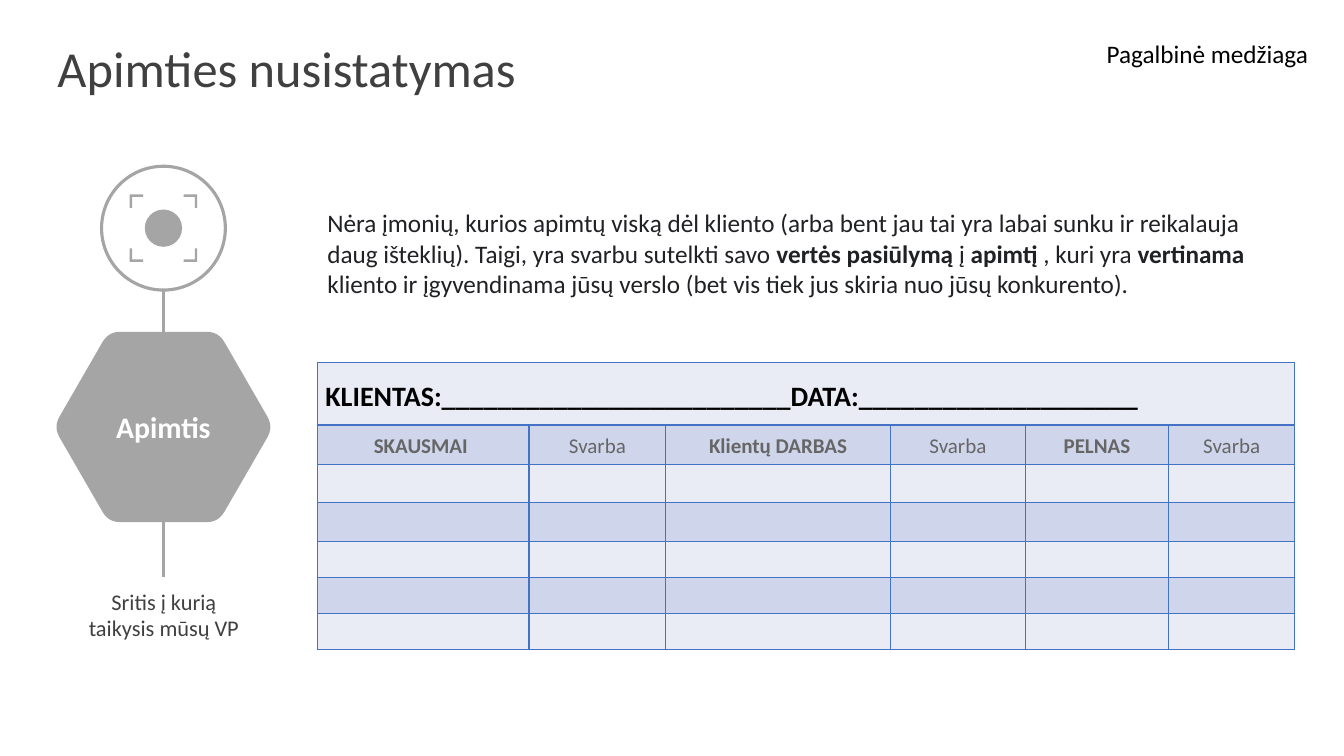
from dataclasses import dataclass
from itertools import product
from math import cos, pi, sin

from lxml import etree
from pptx import Presentation
from pptx.dml.color import RGBColor
from pptx.enum.shapes import MSO_CONNECTOR, MSO_SHAPE
from pptx.enum.text import MSO_ANCHOR, PP_ALIGN
from pptx.oxml.ns import qn
from pptx.util import Cm, Pt

LEFT, CENTER = PP_ALIGN.LEFT, PP_ALIGN.CENTER
TOP, MIDDLE = MSO_ANCHOR.TOP, MSO_ANCHOR.MIDDLE
OVAL, STRAIGHT = MSO_SHAPE.OVAL, MSO_CONNECTOR.STRAIGHT


@dataclass(frozen=True)
class Theme:
    font: str = "Calibri"
    gray: str = "A5A5A5"
    heading: str = "404040"
    body: str = "202124"
    label: str = "666666"
    black: str = "000000"
    white: str = "FFFFFF"
    border: str = "4472C4"
    bands: tuple = ("E9EBF5", "CFD5EA")
    title_size: float = 36
    badge_size: float = 21.3
    client_size: float = 20
    body_size: float = 18
    caption_size: float = 16
    label_size: float = 15
    line_width: float = 2.25
    border_width: float = 1


class SlideBuilder:
    def __init__(self, page, theme):
        self.page = page
        self.theme = theme

    def fill_text(self, frame, spans, size, color, align=LEFT, spacing=None, after=None):
        para = frame.paragraphs[0]
        para.alignment = align
        para.line_spacing = spacing
        para.space_after = after
        para.font.name = self.theme.font
        para.font.size = Pt(size)
        para.font.color.rgb = RGBColor.from_string(color)
        weights = {bold for _, bold in spans}
        if len(weights) == 1:
            para.font.bold = weights.pop()
        for text, bold in spans:
            span = para.add_run()
            span.text = text
            if para.font.bold is None:
                span.font.bold = bold

    def text(self, bounds, spans, size, color, inset=True, wrap=True, anchor=TOP, **layout):
        box = self.page.shapes.add_textbox(*map(Cm, bounds))
        frame = box.text_frame
        frame.word_wrap = wrap
        frame.vertical_anchor = anchor
        if not inset:
            frame.margin_left = frame.margin_right = 0
            frame.margin_top = frame.margin_bottom = 0
        self.fill_text(frame, spans, size, color, **layout)

    def paint(self, shape, filled=True):
        shape.shadow.inherit = False
        gray = RGBColor.from_string(self.theme.gray)
        if filled:
            shape.fill.solid()
            shape.fill.fore_color.rgb = gray
            shape.line.fill.background()
        else:
            shape.fill.background()
            shape.line.color.rgb = gray
            shape.line.width = Pt(self.theme.line_width)

    def circle(self, shapes, x, y, radius, filled):
        side = Cm(2 * radius)
        shape = shapes.add_shape(OVAL, Cm(x - radius), Cm(y - radius), side, side)
        self.paint(shape, filled)

    def polygon(self, shapes, points):
        corners = [(Cm(x), Cm(y)) for x, y in points]
        builder = shapes.build_freeform(*corners[0])
        builder.add_line_segments(corners[1:])
        shape = builder.convert_to_shape()
        self.paint(shape)
        return shape

    def line(self, x, top, bottom):
        line = self.page.shapes.add_connector(STRAIGHT, Cm(x), Cm(top), Cm(x), Cm(bottom))
        line.line.color.rgb = RGBColor.from_string(self.theme.gray)
        line.line.width = Pt(self.theme.line_width)
        etree.SubElement(line._element.spPr, qn("a:effectLst"))

    def focus_icon(self, x, y, reach, arm, thick, dot):
        group = self.page.shapes.add_group_shape()
        bracket = [(reach, reach), (reach - arm, reach), (reach - arm, reach - thick),
                   (reach - thick, reach - thick), (reach - thick, reach - arm),
                   (reach, reach - arm)]
        for across, down in product((-1, 1), repeat=2):
            self.polygon(group.shapes, [(x + across * dx, y + down * dy) for dx, dy in bracket])
        self.circle(group.shapes, x, y, dot, True)

    def hexagon(self, x, y, radius, cut, label):
        inner, steps = cut / radius, 6
        corners = [(x + radius * cos(k * pi / 3), y + radius * sin(k * pi / 3)) for k in range(6)]
        points = []
        for k, corner in enumerate(corners):
            start, end = (
                [c + inner * (n - c) for c, n in zip(corner, neighbour)]
                for neighbour in (corners[k - 1], corners[(k + 1) % 6]))
            for t in (step / steps for step in range(steps + 1)):
                points.append([(1 - t) ** 2 * s + 2 * t * (1 - t) * c + t ** 2 * e
                               for s, c, e in zip(start, corner, end)])
        shape = self.polygon(self.page.shapes, points)
        shape.text_frame.vertical_anchor = MIDDLE
        self.fill_text(shape.text_frame, [(label, True)], self.theme.badge_size,
                       self.theme.white, CENTER)

    def cell_borders(self, cell):
        properties = cell._tc.get_or_add_tcPr()
        for place, side in enumerate(("lnL", "lnR", "lnT", "lnB")):
            edge = etree.Element(qn(f"a:{side}"), w=str(Pt(self.theme.border_width)))
            fill = etree.SubElement(edge, qn("a:solidFill"))
            etree.SubElement(fill, qn("a:srgbClr"), val=self.theme.border)
            properties.insert(place, edge)

    def table(self, left, top, widths, heights, client, headings):
        theme = self.theme
        table = self.page.shapes.add_table(
            len(heights), len(widths), Cm(left), Cm(top),
            Cm(sum(widths)), Cm(sum(heights))).table
        table.first_row = table.horz_banding = False
        for column, width in zip(table.columns, widths):
            column.width = Cm(width)
        for row, height in zip(table.rows, heights):
            row.height = Cm(height)
        table.cell(0, 0).merge(table.cell(0, len(widths) - 1))
        for row, column in product(range(len(heights)), range(len(widths))):
            cell = table.cell(row, column)
            cell.fill.solid()
            cell.fill.fore_color.rgb = RGBColor.from_string(theme.bands[row % 2])
            cell.margin_left = cell.margin_right = Cm(0.2)
            cell.margin_top = cell.margin_bottom = 0
            cell.vertical_anchor = MIDDLE
            self.cell_borders(cell)
        self.fill_text(table.cell(0, 0).text_frame, [(client, True)], theme.client_size,
                       theme.black, spacing=1.15)
        for column, heading in enumerate(headings):
            self.fill_text(table.cell(1, column).text_frame, [(heading, column % 2 == 0)],
                           theme.label_size, theme.label, CENTER, 1.15)


def main():
    deck = Presentation()
    deck.slide_width, deck.slide_height = Cm(33.87), Cm(19.05)
    theme = Theme()
    slide = SlideBuilder(deck.slides.add_slide(deck.slide_layouts[6]), theme)
    axis, icon_y, ring = 4.12, 5.75, 1.56

    slide.text((1.45, 1.04, 30.99, 1.52), [("Apimties nusistatymas", False)],
               theme.title_size, theme.heading, inset=False, anchor=MIDDLE, spacing=0.9)
    slide.line(axis, icon_y + ring, 14.53)
    slide.circle(slide.page.shapes, axis, icon_y, ring, False)
    slide.text((2.11, 14.81, 4.04, 1.37), [("Sritis į kurią taikysis mūsų VP", False)],
               theme.caption_size, theme.heading, inset=False, align=CENTER, after=Pt(10))
    slide.hexagon(axis, 10.76, 2.77, 0.3, "Apimtis")
    slide.focus_icon(axis, icon_y, 0.85, 0.34, 0.06, 0.47)
    slide.table(8, 9.14, (5.33, 3.45, 5.66, 3.4, 3.61, 3.18),
                (1.57, 0.99, 0.97, 0.97, 0.91, 0.91, 0.91),
                "KLIENTAS:" + "_" * 25 + "DATA:" + "_" * 20,
                ("SKAUSMAI ", "Svarba", "Klientų DARBAS", "Svarba", "PELNAS", "Svarba"))
    slide.text((8, 5.11, 24.46, 2.57), [
        ("Nėra įmonių, kurios apimtų viską dėl kliento (arba bent jau tai yra labai sunku "
         "ir reikalauja daug išteklių). Taigi, yra svarbu sutelkti savo ", False),
        ("vertės pasiūlymą ", True), ("į ", False), ("apimtį ", True),
        (", kuri yra ", False), ("vertinama ", True),
        ("kliento ir įgyvendinama jūsų verslo (bet vis tiek jus skiria nuo jūsų "
         "konkurento).", False)], theme.body_size, theme.body)
    slide.text((27.64, 0.84, 5.64, 1.02), [("Pagalbinė medžiaga", False)],
               theme.body_size, theme.black, wrap=False)
    deck.save("out.pptx")


if __name__ == "__main__":
    main()
